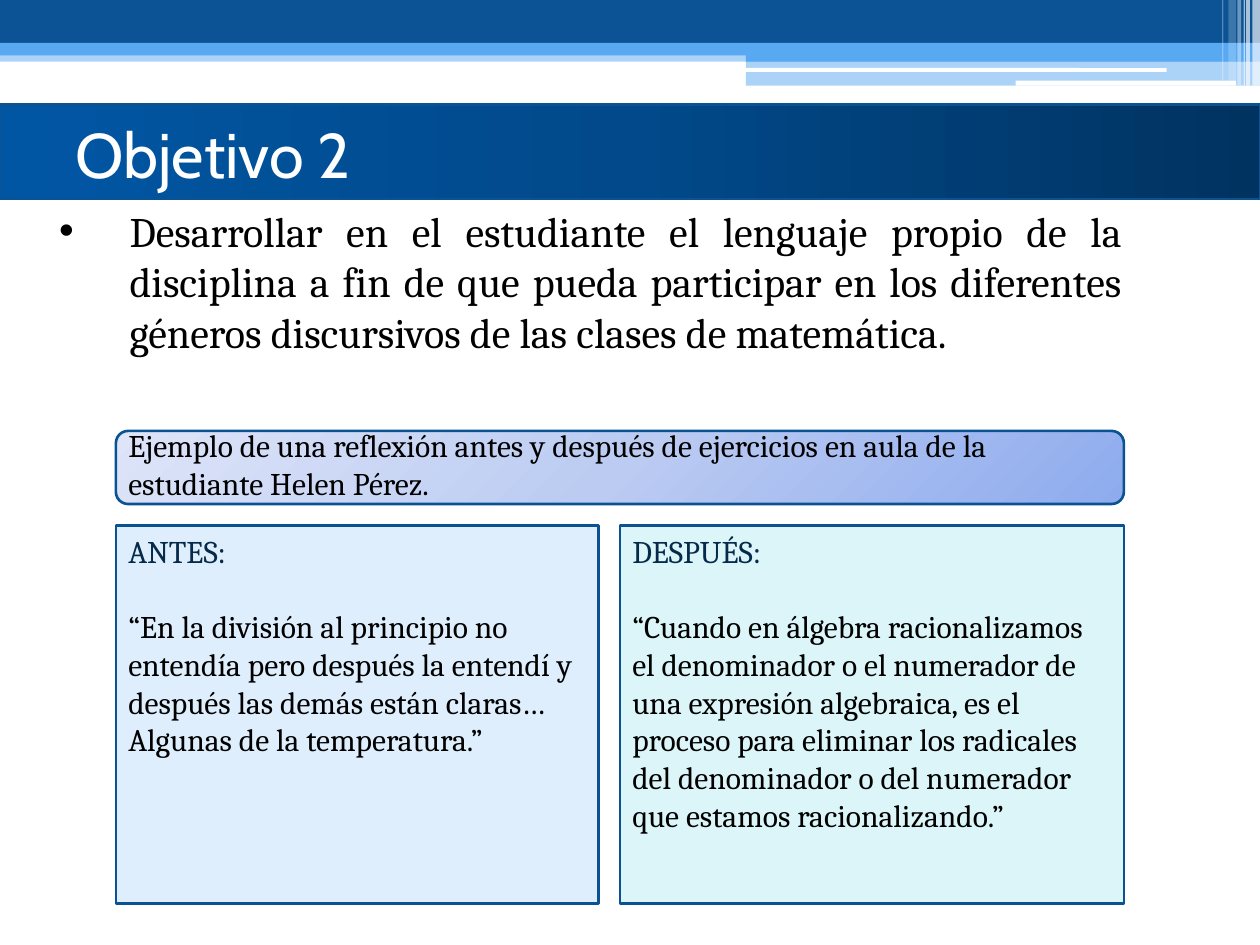
from dataclasses import dataclass

from lxml import etree
from pptx import Presentation
from pptx.dml.color import RGBColor
from pptx.enum.shapes import MSO_SHAPE
from pptx.enum.text import MSO_ANCHOR, MSO_AUTO_SIZE, PP_ALIGN
from pptx.oxml.ns import qn
from pptx.util import Emu, Pt

RECT = MSO_SHAPE.RECTANGLE
ROUNDED = MSO_SHAPE.ROUNDED_RECTANGLE
LEFT = PP_ALIGN.LEFT
JUSTIFY = PP_ALIGN.JUSTIFY
TOP = MSO_ANCHOR.TOP
NO_AUTOFIT = MSO_AUTO_SIZE.NONE

EMU_PER_PX = 9144
BODY_FONT = "Cambria"
TITLE_FONT = "Cabin"
NAVY = "0B5394"
SKY = "59A9F2"
WHITE = "FFFFFF"
BLACK = "000000"
BORDER = "0B5292"


@dataclass(frozen=True)
class Box:
    left: int
    top: int
    width: int
    height: int


@dataclass(frozen=True)
class Band:
    box: Box
    color: str
    opacity: int = 100
    geometry: int = RECT


@dataclass(frozen=True)
class Reflection:
    box: Box
    fill: str
    heading: str
    quote: str


BANDS = [
    Band(Box(0, 40, 1000, 9), SKY, 50),
    Band(Box(0, 0, 1000, 34), NAVY),
    Band(Box(0, 34, 1000, 10), SKY),
    Band(Box(592, 39, 408, 10), SKY),
    Band(Box(592, 48, 408, 20), SKY, 50),
    Band(Box(591, 54, 335, 3), WHITE, geometry=ROUNDED),
    Band(Box(806, 64, 175, 4), WHITE, geometry=ROUNDED),
    Band(Box(994, 0, 6, 68), WHITE, 65),
    Band(Box(989, 0, 3, 68), WHITE, 65),
    Band(Box(987, 0, 1, 68), WHITE, 60),
    Band(Box(982, 0, 3, 68), WHITE, 40),
    Band(Box(975, 0, 6, 64), WHITE, 20),
    Band(Box(970, 0, 1, 64), WHITE, 30),
]

REFLECTIONS = [
    Reflection(
        Box(92, 417, 383, 300), "DEEEFC", "ANTES:",
        "“En la división al principio no entendía pero después la entendí y "
        "después las demás están claras…Algunas de la temperatura.”",
    ),
    Reflection(
        Box(492, 417, 400, 300), "DBF5F9", "DESPUÉS:",
        "“Cuando en álgebra racionalizamos el denominador o el numerador de "
        "una expresión algebraica, es el proceso para eliminar los radicales "
        "del denominador o del numerador que estamos racionalizando.”",
    ),
]


def px(length: int) -> Emu:
    return Emu(length * EMU_PER_PX)


def rgb(color: str) -> RGBColor:
    return RGBColor.from_string(color)


def frame(box: Box) -> tuple:
    return px(box.left), px(box.top), px(box.width), px(box.height)


def add_panel(slide, box: Box, geometry: int = RECT):
    panel = slide.shapes.add_shape(geometry, *frame(box))
    panel.shadow.inherit = False
    panel.line.color.rgb = rgb(BORDER)
    panel.line.width = Pt(1.5)
    return panel


def fill_solid(panel, color: str, opacity: int = 100) -> None:
    panel.fill.solid()
    panel.fill.fore_color.rgb = rgb(color)
    if opacity < 100:
        srgb = panel.fill._xPr.find(f"{qn('a:solidFill')}/{qn('a:srgbClr')}")
        etree.SubElement(srgb, qn("a:alpha"), val=str(opacity * 1000))


def fill_gradient(panel, colors: list[str], circular: bool) -> None:
    gradient = etree.Element(qn("a:gradFill"), rotWithShape="1")
    stops = etree.SubElement(gradient, qn("a:gsLst"))
    for index, color in enumerate(colors):
        position = 100000 * index // (len(colors) - 1)
        stop = etree.SubElement(stops, qn("a:gs"), pos=str(position))
        etree.SubElement(stop, qn("a:srgbClr"), val=color)
    if circular:
        shade = etree.SubElement(gradient, qn("a:path"), {"path": "circle"})
        etree.SubElement(shade, qn("a:fillToRect"), l="100000", t="100000")
    else:
        etree.SubElement(gradient, qn("a:lin"), ang="10800000", scaled="0")
    panel._element.spPr.find(qn("a:prstGeom")).addnext(gradient)


def add_band(slide, band: Band) -> None:
    shape = add_panel(slide, band.box, band.geometry)
    fill_solid(shape, band.color, band.opacity)
    shape.line.fill.background()


def prepare(text_frame) -> None:
    text_frame.word_wrap = True
    text_frame.auto_size = NO_AUTOFIT
    text_frame.vertical_anchor = TOP


def write(paragraph, text: str, size: int, color: str,
          font: str = BODY_FONT, align: int = LEFT) -> None:
    paragraph.alignment = align
    run = paragraph.add_run()
    run.text = text
    run.font.name = font
    run.font.size = Pt(size)
    run.font.color.rgb = rgb(color)


def add_text(slide, box: Box, text: str, size: int, align: int = LEFT):
    text_frame = slide.shapes.add_textbox(*frame(box)).text_frame
    prepare(text_frame)
    paragraph = text_frame.paragraphs[0]
    write(paragraph, text, size, BLACK, align=align)
    return paragraph


def add_bullet(paragraph, margin: int, indent: int) -> None:
    properties = paragraph._p.get_or_add_pPr()
    properties.set("marL", str(px(margin)))
    properties.set("indent", str(px(indent)))
    etree.SubElement(properties, qn("a:buFont"), typeface="Arial")
    etree.SubElement(properties, qn("a:buChar"), char="•")


def place_title(slide, box: Box, text: str) -> None:
    title = slide.shapes.title
    title.left, title.top, title.width, title.height = frame(box)
    prepare(title.text_frame)
    title.text_frame.margin_top = 0
    write(title.text_frame.paragraphs[0], text, 36, WHITE, TITLE_FONT)
    slide.shapes._spTree.append(title._element)


def add_reflection(slide, reflection: Reflection) -> None:
    panel = add_panel(slide, reflection.box)
    fill_solid(panel, reflection.fill)
    prepare(panel.text_frame)
    heading = panel.text_frame.paragraphs[0]
    write(heading, reflection.heading, 18, "052A4A")
    heading.space_after = Pt(21.5)
    write(panel.text_frame.add_paragraph(), reflection.quote, 18, BLACK)


def main() -> None:
    deck = Presentation()
    deck.slide_width, deck.slide_height = px(1000), px(750)
    slide = deck.slides.add_slide(deck.slide_layouts[5])

    for band in BANDS:
        add_band(slide, band)

    example_panel = add_panel(slide, Box(92, 342, 800, 58), ROUNDED)
    fill_gradient(example_panel, ["8EABEE", "BBCBF2", "DEE5F8"], circular=True)
    title_bar = add_panel(slide, Box(0, 83, 1000, 75))
    fill_gradient(title_bar, ["013361", "01498A", "0156A4"], circular=False)

    objective = add_text(
        slide, Box(25, 158, 875, 172),
        "Desarrollar en el estudiante el lenguaje propio de la disciplina a fin "
        "de que pueda participar en los diferentes géneros discursivos de las "
        "clases de matemática.", 24, JUSTIFY)
    add_bullet(objective, 68, -56)
    place_title(slide, Box(50, 92, 900, 117), "Objetivo 2")
    add_text(
        slide, Box(92, 333, 808, 71),
        "Ejemplo de una reflexión antes y después de ejercicios en aula de la "
        "estudiante Helen Pérez.", 18)

    for reflection in REFLECTIONS:
        add_reflection(slide, reflection)

    deck.save("out.pptx")


if __name__ == "__main__":
    main()
